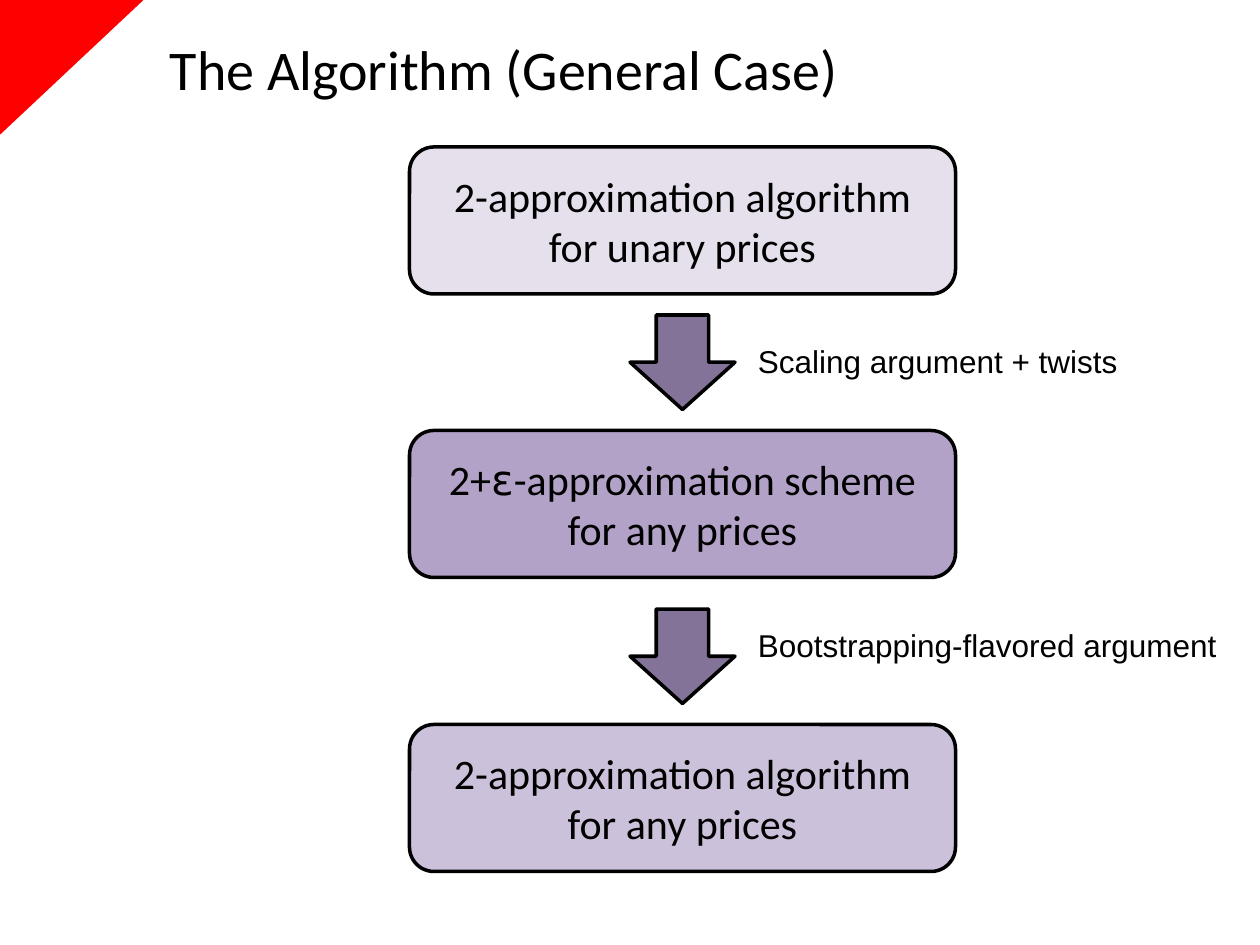
import pptx
import pptx.util
import pptx.dml.color
import pptx.enum.shapes
import pptx.enum.text
import pptx.oxml.ns
import lxml.etree

Pt = pptx.util.Pt
SHAPE = pptx.enum.shapes.MSO_SHAPE
ALIGN = pptx.enum.text.PP_ALIGN
ANCHOR = pptx.enum.text.MSO_ANCHOR

COLORS = {
    "corner": "FF0000",
    "ink": "000000",
    "unary": "E6E0EC",
    "scheme": "B3A2C7",
    "final": "CCC1DA",
    "arrow": "604A7B",
}

# Content: text is a list of (words, font) runs
TITLE = [("The Algorithm (General Case)", "Calibri")]
STEPS = [  # top, fill, text
    (84, "unary", [("2-approximation algorithm for unary prices", "Calibri")]),
    (246, "scheme", [("2+", "Calibri"), ("ε", "DejaVu Sans"),
                     ("-approximation scheme for any prices", "Calibri")]),
    (414, "final", [("2-approximation algorithm for any prices", "Calibri")]),
]
REASONS = [  # label top, label width, text
    (192, 222, [("Scaling argument + twists", "Arial")]),
    (354, 279, [("Bootstrapping-flavored argument", "Arial")]),
]

# Layout in points
BOX_LEFT, BOX_WIDTH, BOX_HEIGHT = 234, 312, 84
ARROW_WIDTH, ARROW_HEIGHT, ARROW_GAP = 60, 54, 12
ARROW_LEFT = BOX_LEFT + (BOX_WIDTH - ARROW_WIDTH) / 2
LABEL_LEFT, LABEL_HEIGHT = 426, 29


def color(name):
    return pptx.dml.color.RGBColor.from_string(COLORS[name])


def write_text(shape, runs, size=18, align=ALIGN.LEFT, anchor=ANCHOR.TOP, wrap=True):
    frame = shape.text_frame
    frame.word_wrap = wrap
    frame.vertical_anchor = anchor
    paragraph = frame.paragraphs[0]
    paragraph.alignment = align
    for words, font in runs:
        run = paragraph.add_run()
        run.text = words
        run.font.name = font
        run.font.size = Pt(size)
        run.font.color.rgb = color("ink")


def add_shape(slide, kind, left, top, width, height, fill, outlined=True, opacity=None):
    shape = slide.shapes.add_shape(kind, Pt(left), Pt(top), Pt(width), Pt(height))
    shape.shadow.inherit = False
    shape.fill.solid()
    shape.fill.fore_color.rgb = color(fill)
    if outlined:
        shape.line.color.rgb = color("ink")
        shape.line.width = Pt(2)
    else:
        shape.line.fill.background()
    if opacity is not None:
        qn = pptx.oxml.ns.qn
        fill_color = shape.element.spPr.find(qn("a:solidFill")).find(qn("a:srgbClr"))
        lxml.etree.SubElement(fill_color, qn("a:alpha")).set("val", str(opacity * 1000))
    return shape


def add_text_box(slide, left, top, width, height, runs, **text_format):
    text_box = slide.shapes.add_textbox(Pt(left), Pt(top), Pt(width), Pt(height))
    write_text(text_box, runs, **text_format)
    return text_box


def main():
    presentation = pptx.Presentation()
    presentation.slide_width, presentation.slide_height = Pt(720), Pt(540)
    slide = presentation.slides.add_slide(presentation.slide_layouts[6])

    # Corner and title
    corner = add_shape(slide, SHAPE.RIGHT_TRIANGLE, 2.5, -2.5, 77, 82, "corner", outlined=False)
    corner.rotation = 90
    add_text_box(slide, 90, 0, 590, 78, TITLE, size=32, anchor=ANCHOR.MIDDLE)

    # Steps
    for top, fill, runs in STEPS:
        box = add_shape(slide, SHAPE.FLOWCHART_ALTERNATE_PROCESS,
                        BOX_LEFT, top, BOX_WIDTH, BOX_HEIGHT, fill)
        write_text(box, runs, size=24, align=ALIGN.CENTER, anchor=ANCHOR.MIDDLE)

    # Each arrow ends just above the step it leads to
    for (next_top, _, _), (label_top, label_width, runs) in zip(STEPS[1:], REASONS):
        add_shape(slide, SHAPE.DOWN_ARROW, ARROW_LEFT, next_top - ARROW_GAP - ARROW_HEIGHT,
                  ARROW_WIDTH, ARROW_HEIGHT, "arrow", opacity=77)
        label = add_text_box(slide, LABEL_LEFT, label_top, label_width, LABEL_HEIGHT,
                             runs, wrap=False)
        label.text_frame.auto_size = pptx.enum.text.MSO_AUTO_SIZE.SHAPE_TO_FIT_TEXT

    presentation.save("out.pptx")


if __name__ == "__main__":
    main()
